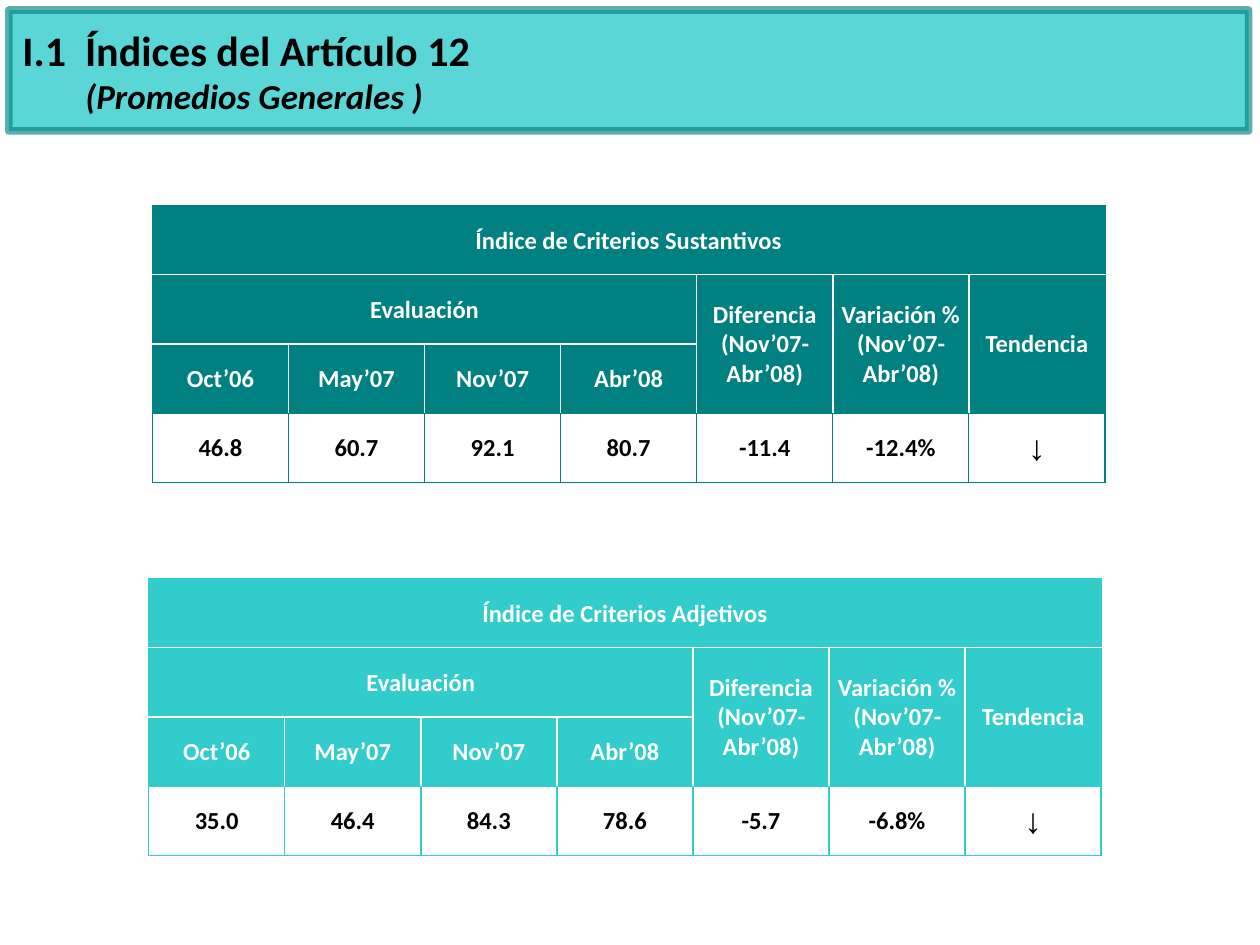
from lxml import etree
from pptx import Presentation
from pptx.dml.color import RGBColor
from pptx.enum.shapes import MSO_SHAPE
from pptx.enum.text import MSO_ANCHOR, PP_ALIGN
from pptx.oxml.ns import qn
from pptx.util import Inches, Pt

RECTANGLE = MSO_SHAPE.RECTANGLE
MIDDLE = MSO_ANCHOR.MIDDLE
CENTER = PP_ALIGN.CENTER
TEAL = RGBColor(0x00, 0x80, 0x80)
TURQUOISE = RGBColor(0x33, 0xCC, 0xCC)
WHITE = RGBColor(0xFF, 0xFF, 0xFF)
BLACK = RGBColor(0x00, 0x00, 0x00)
COLUMNS, ROWS = 7, 4
BODY_ROW = ROWS - 1
COLUMN_WIDTH, ROW_HEIGHT = 1.08, 0.55
DATES = ["Oct’06", "May’07", "Nov’07", "Abr’08"]
PERIOD = "(Nov’07-Abr’08)"


class IndexSlide:
    """Draws the heading and the index tables on one slide in a shared style."""

    def __init__(self, slide, font="Calibri"):
        self.slide = slide
        self.font = font

    def add_run(self, paragraph, text, size, color, italic=False, font=None, bold=True):
        run = paragraph.add_run()
        run.text = text
        run.font.name = font or self.font
        run.font.size = Pt(size)
        run.font.bold = bold
        run.font.italic = italic
        run.font.color.rgb = color

    def add_alpha(self, fill_element, percent):
        color = fill_element.find(qn("a:srgbClr"))
        etree.SubElement(color, qn("a:alpha"), val=str(percent * 1000))

    def add_banner(self, left, top, width, height):
        shape = self.slide.shapes.add_shape(
            RECTANGLE, Inches(left), Inches(top), Inches(width), Inches(height))
        shape.shadow.inherit = False
        shape.fill.solid()
        shape.fill.fore_color.rgb = TURQUOISE
        shape.line.color.rgb = TEAL
        shape.line.width = Pt(4.33)
        properties = shape.element.spPr
        self.add_alpha(properties.find(qn("a:solidFill")), 80)
        line = properties.find(qn("a:ln"))
        self.add_alpha(line.find(qn("a:solidFill")), 64)
        etree.SubElement(line, qn("a:round"))

    def add_heading(self, left, top, width, height, title, subtitle):
        shape = self.slide.shapes.add_textbox(
            Inches(left), Inches(top), Inches(width), Inches(height))
        frame = shape.text_frame
        frame.word_wrap = True
        frame.vertical_anchor = MIDDLE
        self.add_run(frame.paragraphs[0], title, 24, BLACK)
        paragraph = frame.add_paragraph()
        self.add_run(paragraph, "\t" + subtitle, 20, BLACK, italic=True)
        tabs = etree.SubElement(paragraph._p.get_or_add_pPr(), qn("a:tabLst"))
        etree.SubElement(tabs, qn("a:tab"), pos=str(Inches(0.5)), algn="l")

    def add_border(self, cell, side, color, width):
        properties = cell._tc.get_or_add_tcPr()
        line = etree.SubElement(properties, qn("a:ln" + side), w=str(Pt(width)))
        fill = etree.SubElement(line, qn("a:solidFill"))
        etree.SubElement(fill, qn("a:srgbClr"), val=str(color))

    def fill_cell(self, table, row, column, lines, accent, thin, row_span=1, column_span=1):
        last_row, last_column = row + row_span - 1, column + column_span - 1
        is_body = row == BODY_ROW
        inner = (accent, thin) if is_body else (WHITE, 1)
        outer = (accent, 1)
        borders = {
            "L": outer if column == 0 else inner,
            "R": outer if last_column == COLUMNS - 1 else inner,
            "T": outer if row == 0 else inner,
            "B": (accent, thin) if last_row == BODY_ROW - 1 else outer if is_body else inner,
        }
        origin = table.cell(row, column)
        if row_span * column_span > 1:
            origin.merge(table.cell(last_row, last_column))
        for r in range(row, last_row + 1):
            for c in range(column, last_column + 1):
                cell = table.cell(r, c)
                for side, (color, width) in borders.items():
                    self.add_border(cell, side, color, width)
                cell.fill.solid()
                cell.fill.fore_color.rgb = WHITE if is_body else accent
        origin.vertical_anchor = MIDDLE
        origin.margin_left = origin.margin_right = origin.margin_top = Inches(0.01)
        origin.margin_bottom = 0
        frame = origin.text_frame
        for index, text in enumerate(lines):
            paragraph = frame.add_paragraph() if index else frame.paragraphs[0]
            paragraph.alignment = CENTER
            arrow = text == "↓"
            self.add_run(paragraph, text, 20 if arrow else 14,
                         BLACK if is_body else WHITE, font="Arial" if arrow else None)

    def add_index_table(self, left, top, title, values, accent, thin):
        table = self.slide.shapes.add_table(
            ROWS, COLUMNS, Inches(left), Inches(top),
            Inches(COLUMN_WIDTH * COLUMNS), Inches(ROW_HEIGHT * ROWS)).table
        table.first_row = table.horz_banding = False
        for column in table.columns:
            column.width = Inches(COLUMN_WIDTH)
        for row in table.rows:
            row.height = Inches(ROW_HEIGHT)
        self.fill_cell(table, 0, 0, [title], accent, thin, column_span=COLUMNS)
        self.fill_cell(table, 1, 0, ["Evaluación"], accent, thin, column_span=len(DATES))
        measures = [["Diferencia", PERIOD], ["Variación %", PERIOD], ["Tendencia"]]
        for column, lines in enumerate(measures, len(DATES)):
            self.fill_cell(table, 1, column, lines, accent, thin, row_span=2)
        for column, date in enumerate(DATES):
            self.fill_cell(table, 2, column, [date], accent, thin)
        for column, value in enumerate(values):
            self.fill_cell(table, BODY_ROW, column, [value], accent, thin)


def main():
    presentation = Presentation()
    presentation.slide_width = Inches(10)
    presentation.slide_height = Inches(7.5)
    page = IndexSlide(presentation.slides.add_slide(presentation.slide_layouts[6]))
    page.add_banner(0.07, 0.08, 9.84, 0.96)
    page.add_heading(0.08, 0.09, 9.17, 0.94,
                     "I.1  Índices del Artículo 12", "(Promedios Generales )")
    page.add_index_table(1.21, 1.63, "Índice de Criterios Sustantivos",
                         ["46.8", "60.7", "92.1", "80.7", "-11.4", "-12.4%", "↓"], TEAL, 0.5)
    page.add_index_table(1.18, 4.59, "Índice de Criterios Adjetivos",
                         ["35.0", "46.4", "84.3", "78.6", "-5.7", "-6.8%", "↓"], TURQUOISE, 1)
    presentation.save("out.pptx")


if __name__ == "__main__":
    main()
